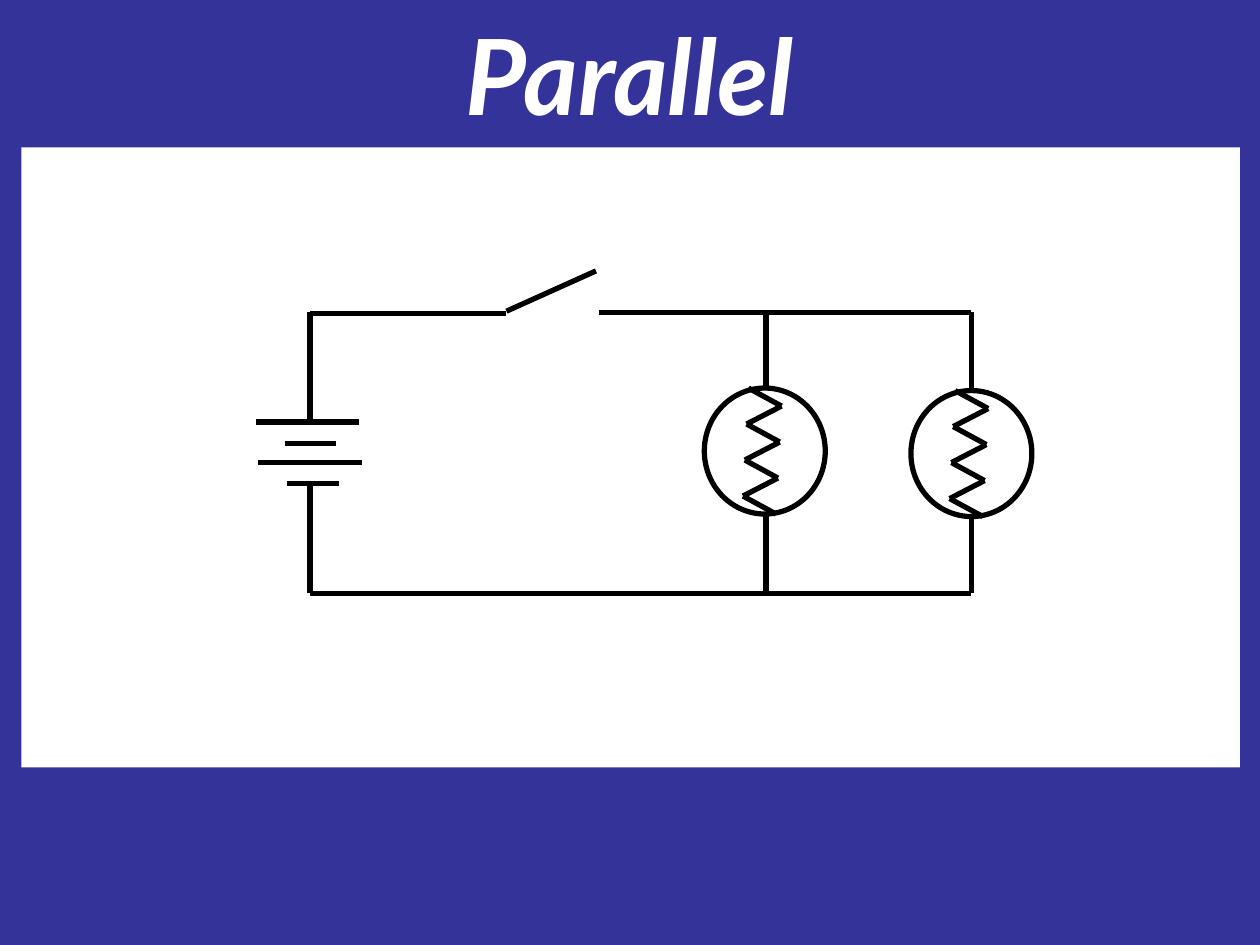
"""Build a slide showing a parallel circuit with a switch, a battery and two lamps."""
import pptx
import pptx.dml.color
import pptx.enum.shapes
import pptx.enum.text
import pptx.oxml.ns
import pptx.util
from lxml import etree

Inches = pptx.util.Inches
Pt = pptx.util.Pt
RGBColor = pptx.dml.color.RGBColor
SHAPE = pptx.enum.shapes.MSO_SHAPE
BLUE = RGBColor(0x33, 0x33, 0x99)
WHITE = RGBColor(0xFF, 0xFF, 0xFF)
BLACK = RGBColor(0, 0, 0)

LEFT, MID, RIGHT = 2.46, 6.08, 7.71
TOP, BASE = 2.48, 4.71
WIRES = [
    (LEFT, TOP, LEFT, 3.35),
    (LEFT, 3.84, LEFT, BASE),
    (LEFT, 2.49, 4.02, 2.49),
    (4.02, 2.47, 4.73, 2.15),
    (4.75, TOP, RIGHT, TOP),
    (LEFT, BASE, RIGHT, BASE),
    (MID, TOP, MID, BASE),
    (RIGHT, TOP, RIGHT, BASE),
]
CELLS = [(2.03, 3.35), (2.05, 3.67)]
LAMPS = [(6.07, 3.58), (RIGHT, 3.6)]


def add_title(slide, text):
    title = slide.shapes.title
    title.left, title.top = Inches(0), Inches(0)
    title.width, title.height = Inches(10), Inches(1.17)
    frame = title.text_frame
    frame.vertical_anchor = pptx.enum.text.MSO_ANCHOR.MIDDLE
    para = frame.paragraphs[0]
    para.alignment = pptx.enum.text.PP_ALIGN.CENTER
    run = para.add_run()
    run.text = text
    font = run.font
    font.name, font.size = "Lato", Pt(60)
    font.bold = font.italic = True
    font.color.rgb = WHITE


def add_shape(slide, kind, left, top, width, height):
    shape = slide.shapes.add_shape(
        kind, Inches(left), Inches(top), Inches(width), Inches(height))
    shape.shadow.inherit = False
    shape.fill.solid()
    shape.fill.fore_color.rgb = WHITE
    shape.line.fill.background()
    return shape


def set_line(line):
    line.color.rgb = BLACK
    line.width = Pt(3)


def add_wire(slide, x1, y1, x2, y2):
    wire = slide.shapes.add_connector(
        pptx.enum.shapes.MSO_CONNECTOR.STRAIGHT,
        Inches(x1), Inches(y1), Inches(x2), Inches(y2))
    set_line(wire.line)
    etree.SubElement(wire._element.spPr, pptx.oxml.ns.qn("a:effectLst"))


def add_cell(slide, left, top):
    add_wire(slide, left, top, left + 0.82, top)
    add_wire(slide, left + 0.23, top + 0.17, left + 0.64, top + 0.17)


def add_lamp(slide, x, y):
    bulb = add_shape(slide, SHAPE.OVAL, x - 0.48, y - 0.5, 0.96, 1)
    set_line(bulb.line)
    turns = [(x - 0.13 - 0.05 * i / 7 + 0.27 * (i % 2), y - 0.5 + i / 7)
             for i in range(8)]
    for start, end in zip(turns, turns[1:]):
        add_wire(slide, *start, *end)


def main():
    deck = pptx.Presentation()
    deck.slide_width, deck.slide_height = Inches(10), Inches(7.5)
    slide = deck.slides.add_slide(deck.slide_layouts[5])
    slide.background.fill.solid()
    slide.background.fill.fore_color.rgb = BLUE
    add_title(slide, "Parallel")
    add_shape(slide, SHAPE.RECTANGLE, 0.17, 1.17, 9.67, 4.92)
    for wire in WIRES:
        add_wire(slide, *wire)
    for cell in CELLS:
        add_cell(slide, *cell)
    for lamp in LAMPS:
        add_lamp(slide, *lamp)
    deck.save("out.pptx")


if __name__ == "__main__":
    main()
